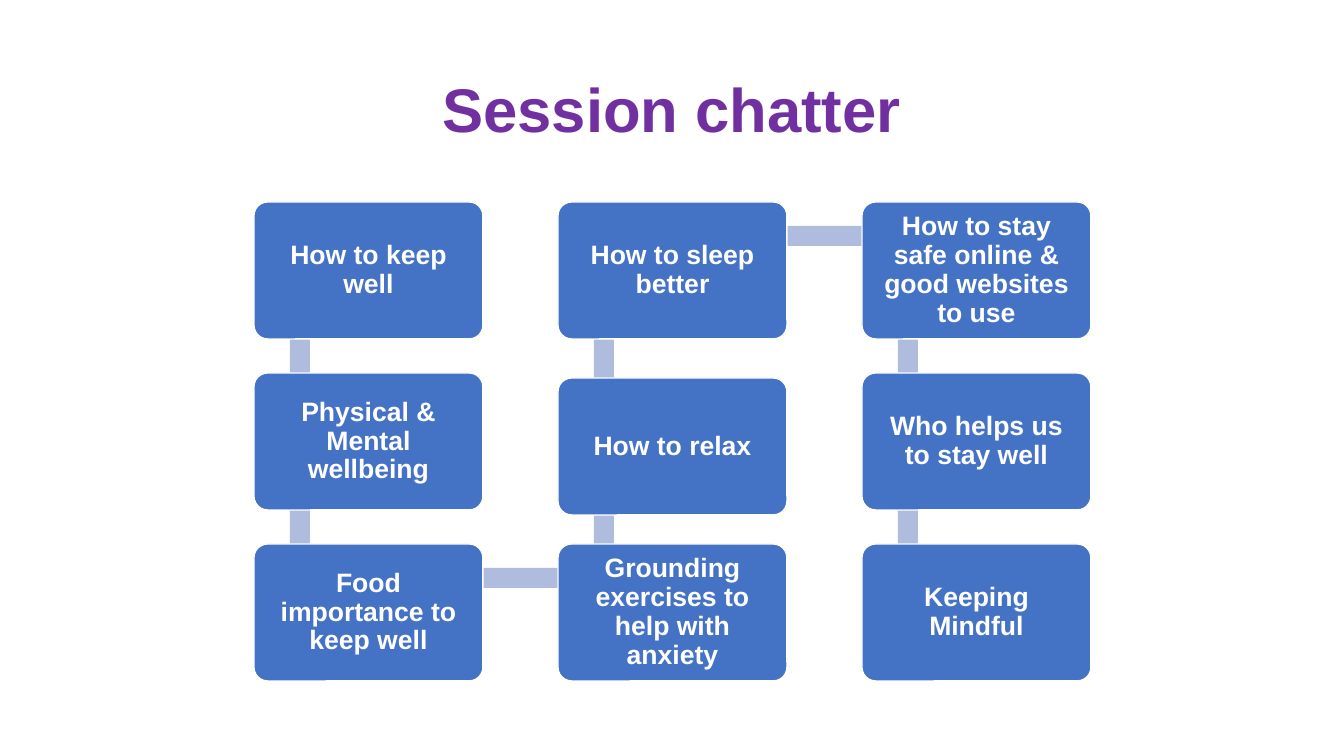
from itertools import pairwise

from pptx import Presentation
from pptx.dml.color import RGBColor
from pptx.enum.shapes import MSO_SHAPE
from pptx.enum.text import MSO_ANCHOR, PP_ALIGN
from pptx.util import Inches, Pt

PURPLE = RGBColor(0x70, 0x30, 0xA0)
BLUE = RGBColor(0x44, 0x72, 0xC4)
PALE_BLUE = RGBColor(0xB0, 0xBC, 0xDE)
WHITE = RGBColor(0xFF, 0xFF, 0xFF)

PX_PER_INCH = 100.8
PAGE_WIDTH, PAGE_HEIGHT = 1344, 756

BOX_WIDTH, BOX_HEIGHT = 229, 137
COLUMN_STEP, ROW_STEP = 304, 171
BAR_THICKNESS = 20
JOINT_X, JOINT_Y = 46, 34  # where the bars meet, from a box's top left corner

# Topics in order along the path: column, row, downward nudge, wording
TOPICS = [
    (0, 0, 0, "How to keep well"),
    (0, 1, 0, "Physical & Mental wellbeing"),
    (0, 2, 0, "Food importance to keep well"),
    (1, 2, 0, "Grounding exercises to help with anxiety"),
    (1, 1, 5, "How to relax"),
    (1, 0, 0, "How to sleep better"),
    (2, 0, 0, "How to stay safe online & good websites to use"),
    (2, 1, 0, "Who helps us to stay well"),
    (2, 2, 0, "Keeping Mindful"),
]


def px(length):
    return Inches(length / PX_PER_INCH)


def write_text(frame, text, size, color, inset_x, inset_y):
    frame.word_wrap = True
    frame.vertical_anchor = MSO_ANCHOR.MIDDLE
    frame.margin_left = frame.margin_right = px(inset_x)
    frame.margin_top = frame.margin_bottom = px(inset_y)
    frame.text = text
    para = frame.paragraphs[0]
    para.alignment = PP_ALIGN.CENTER
    para.line_spacing = 0.9
    font = para.runs[0].font
    font.name = "Arial"
    font.size = Pt(size)
    font.bold = True
    font.color.rgb = color


def add_title(page, left, top, width, height):
    box = page.shapes.add_textbox(px(left), px(top), px(width), px(height))
    write_text(box.text_frame, "Session chatter", 44, PURPLE, 10, 5)


def add_bar(page, start, end):
    """Join two points on one row or column with a flat bar."""
    (x1, y1), (x2, y2) = start, end
    left, top = min(x1, x2), min(y1, y2)
    width, height = abs(x2 - x1), abs(y2 - y1)
    if width:
        top, height = top - BAR_THICKNESS // 2, BAR_THICKNESS
    else:
        left, width = left - BAR_THICKNESS // 2, BAR_THICKNESS
    bar = page.shapes.add_shape(
        MSO_SHAPE.RECTANGLE, px(left), px(top), px(width), px(height))
    bar.shadow.inherit = False
    bar.fill.solid()
    bar.fill.fore_color.rgb = PALE_BLUE
    bar.line.fill.background()


def add_topic(page, left, top, text):
    box = page.shapes.add_shape(
        MSO_SHAPE.ROUNDED_RECTANGLE,
        px(left), px(top), px(BOX_WIDTH), px(BOX_HEIGHT))
    box.adjustments[0] = 0.1
    box.shadow.inherit = False
    box.fill.solid()
    box.fill.fore_color.rgb = BLUE
    box.line.color.rgb = WHITE
    box.line.width = Pt(1)
    write_text(box.text_frame, text, 19, WHITE, 12, 12)


def add_topic_path(page, left, top):
    corners = [(left + column * COLUMN_STEP, top + row * ROW_STEP + nudge)
               for column, row, nudge, _ in TOPICS]

    # Bars lie behind the boxes
    joints = [(x + JOINT_X, y + JOINT_Y) for x, y in corners]
    for start, end in pairwise(joints):
        add_bar(page, start, end)

    # Topic boxes
    for (x, y), (_, _, _, text) in zip(corners, TOPICS):
        add_topic(page, x, y, text)


def main():
    deck = Presentation()
    deck.slide_width = px(PAGE_WIDTH)
    deck.slide_height = px(PAGE_HEIGHT)
    page = deck.slides.add_slide(deck.slide_layouts[6])
    add_title(page, 92, 40, 1160, 146)
    add_topic_path(page, 254, 202)
    deck.save("out.pptx")


if __name__ == "__main__":
    main()
